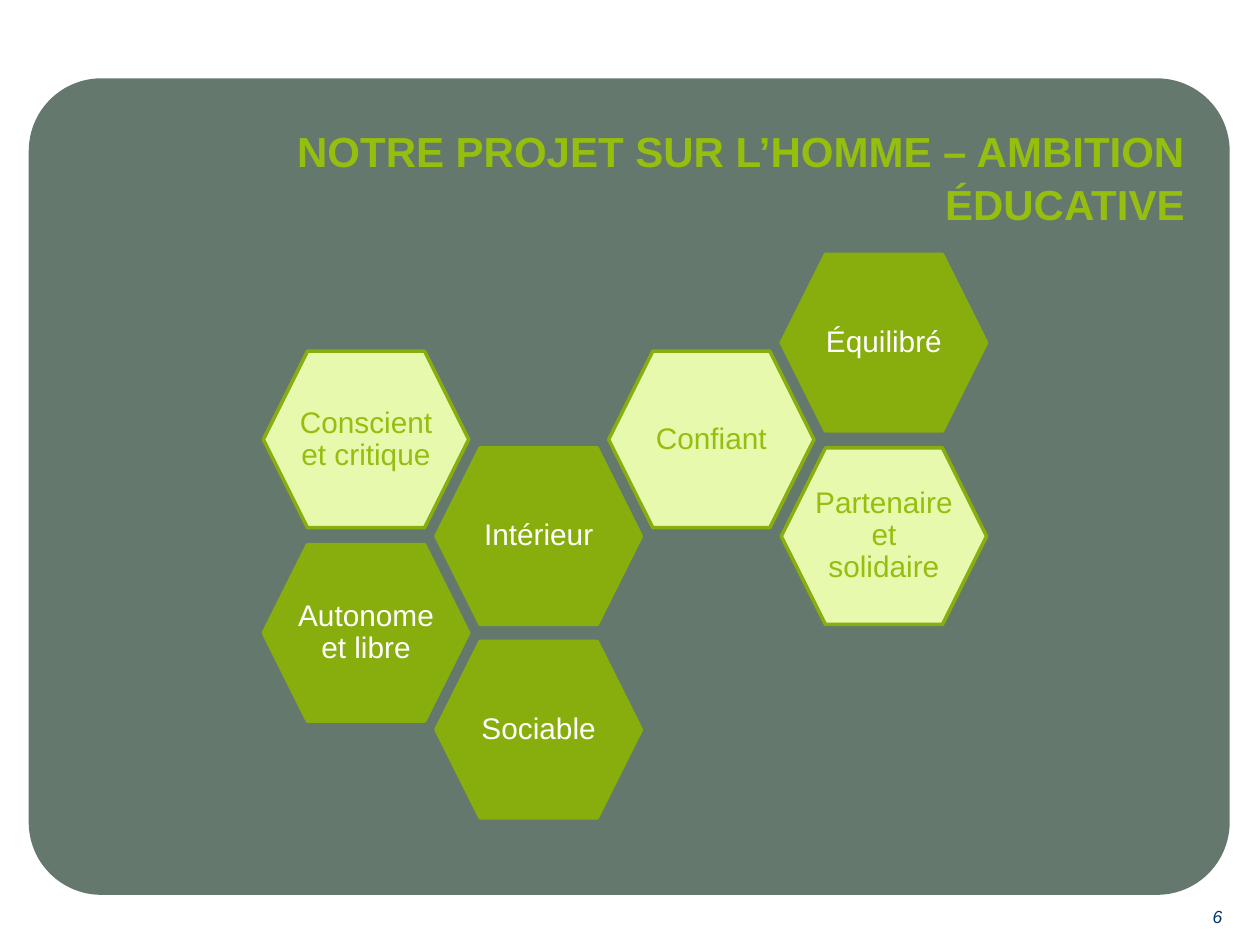
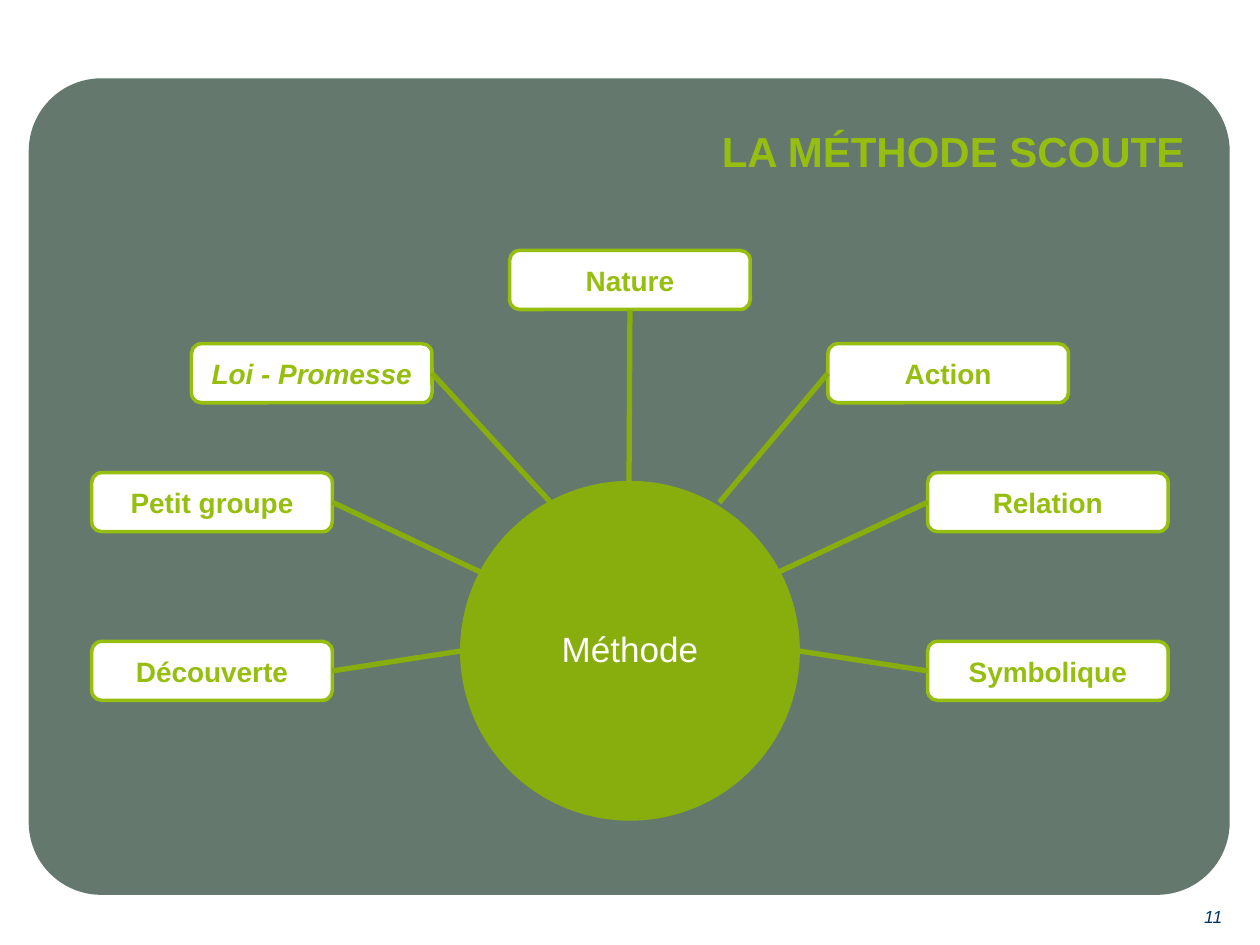
from dataclasses import dataclass

from lxml.etree import SubElement
from pptx import Presentation
from pptx.dml.color import RGBColor
from pptx.enum.shapes import MSO_CONNECTOR, MSO_SHAPE
from pptx.enum.text import MSO_ANCHOR, PP_ALIGN
from pptx.oxml.ns import qn
from pptx.util import Cm, Pt


@dataclass(frozen=True)
class Theme:
    font: str = "Arial"
    panel: str = "64786E"
    lime: str = "96BE0F"
    green: str = "88AE0E"
    pale: str = "E7F9AD"
    white: str = "FFFFFF"
    navy: str = "003366"
    title_size: int = 24
    hub_size: int = 20
    quality_size: int = 17
    element_size: int = 16
    number_size: int = 10
    outline: float = 2
    spoke: float = 3


SLIDE_W, SLIDE_H = 25.4, 19.05
PANEL = (0.58, 1.58, 24.21, 16.46)
TITLE = (1.27, 2.36, 22.86, 1.57)
NUMBER = (16.15, 18.14, 8.74, 0.53)

HEX_W, HEX_H = 4.14, 3.56
HEX_LEFT, HEX_TOP = 5.31, 5.13
HEX_STEP_X, HEX_STEP_Y = 3.48, 1.95
LABEL_PAD_X, LABEL_PAD_Y = 0.64, 0.55

HUB_SIZE, HUB_TOP = 6.78, 9.73
BOX_W, BOX_H = 4.85, 1.19
BOTTOM, LEFT, RIGHT = 2, 1, 3

QUALITIES = [
    ("Conscient et critique", 0, 1, True),
    ("Autonome et libre", 0, 3, False),
    ("Sociable", 1, 4, False),
    ("Intérieur", 1, 2, False),
    ("Confiant", 2, 1, True),
    ("Partenaire et solidaire", 3, 2, True),
    ("Équilibré", 3, 0, False),
]

OUTER_X, INNER_X = 1.85, 3.86
METHOD_ELEMENTS = [
    ("Découverte", OUTER_X, 12.93, RIGHT, (9.31, 13.12)),
    ("Petit groupe", OUTER_X, 9.53, RIGHT, (9.68, 11.53)),
    ("Loi - Promesse", INNER_X, 6.93, RIGHT, (11.1, 10.13)),
    ("Nature", (SLIDE_W - BOX_W) / 2, 5.05, BOTTOM, (12.68, HUB_TOP)),
    ("Action", SLIDE_W - INNER_X - BOX_W, 6.93, LEFT, (14.5, 10.13)),
    ("Relation", SLIDE_W - OUTER_X - BOX_W, 9.53, LEFT, (15.7, 11.53)),
    ("Symbolique", SLIDE_W - OUTER_X - BOX_W, 12.93, LEFT, (16.09, 13.12)),
]


class Deck:
    def __init__(self, theme):
        self.theme = theme
        self.presentation = Presentation()
        self.presentation.slide_width = Cm(SLIDE_W)
        self.presentation.slide_height = Cm(SLIDE_H)
        self.slide = None

    def start_slide(self, title, number):
        theme = self.theme
        self.slide = self.presentation.slides.add_slide(
            self.presentation.slide_layouts[6])
        self.shape(MSO_SHAPE.ROUNDED_RECTANGLE, PANEL, theme.panel, adjustment=0.089)
        self.text(NUMBER, number, theme.navy, theme.number_size,
                  align=PP_ALIGN.RIGHT, italic=True)
        self.text(TITLE, title, theme.lime, theme.title_size,
                  align=PP_ALIGN.RIGHT, spacing=1.05, bold=True)

    def shape(self, preset, frame, fill, line=None, adjustment=None, parent=None):
        shapes = (parent or self.slide).shapes
        shape = shapes.add_shape(preset, *map(Cm, frame))
        shape.shadow.inherit = False
        shape.fill.solid()
        shape.fill.fore_color.rgb = RGBColor.from_string(fill)
        if adjustment is not None:
            shape.adjustments[0] = adjustment
        if line:
            shape.line.color.rgb = RGBColor.from_string(line)
            shape.line.width = Pt(self.theme.outline)
        else:
            shape.line.fill.background()
        return shape

    def text(self, frame, words, color, size, parent=None, insets=None, **style):
        box = (parent or self.slide).shapes.add_textbox(*map(Cm, frame))
        for side, inset in (insets or {}).items():
            setattr(box.text_frame, side, Cm(inset))
        self.label(box, words, color, size, **style)

    def label(self, shape, words, color, size, align=PP_ALIGN.CENTER,
              anchor=MSO_ANCHOR.TOP, spacing=1.0, bold=False, italic=False):
        frame = shape.text_frame
        frame.word_wrap = True
        frame.vertical_anchor = anchor
        paragraph = frame.paragraphs[0]
        paragraph.alignment = align
        paragraph.line_spacing = spacing
        run = paragraph.add_run()
        run.text = words
        run.font.color.rgb = RGBColor.from_string(color)
        formats = {"name": self.theme.font, "size": Pt(size),
                   "bold": bold, "italic": italic}
        for attribute, value in formats.items():
            setattr(run.font, attribute, value)

    def hexagon(self, words, column, row, pale):
        theme = self.theme
        left = HEX_LEFT + column * HEX_STEP_X
        top = HEX_TOP + row * HEX_STEP_Y
        cell = self.slide.shapes.add_group_shape()
        self.shape(MSO_SHAPE.HEXAGON, (left, top, HEX_W, HEX_H),
                   theme.pale if pale else theme.green, theme.green, 0.25, cell)
        caption = (left + LABEL_PAD_X, top + LABEL_PAD_Y,
                   HEX_W - 2 * LABEL_PAD_X, HEX_H - 2 * LABEL_PAD_Y)
        insets = {"margin_left": 0, "margin_right": 0,
                  "margin_top": 0.05, "margin_bottom": 0.05}
        self.text(caption, words, theme.lime if pale else theme.white,
                  theme.quality_size, cell, insets,
                  anchor=MSO_ANCHOR.MIDDLE, spacing=0.9)

    def hub(self, words):
        theme = self.theme
        frame = ((SLIDE_W - HUB_SIZE) / 2, HUB_TOP, HUB_SIZE, HUB_SIZE)
        circle = self.shape(MSO_SHAPE.OVAL, frame, theme.green, theme.green)
        self.label(circle, words, theme.white, theme.hub_size,
                   anchor=MSO_ANCHOR.MIDDLE, spacing=0.9)

    def box(self, words, left, top, italic=False):
        theme = self.theme
        box = self.shape(MSO_SHAPE.ROUNDED_RECTANGLE, (left, top, BOX_W, BOX_H),
                         theme.white, theme.lime)
        self.label(box, words, theme.lime, theme.element_size,
                   anchor=MSO_ANCHOR.MIDDLE, bold=True, italic=italic)
        return box

    def spoke(self, box, side, hub_point):
        end = [Cm(value) for value in hub_point]
        spoke = self.slide.shapes.add_connector(MSO_CONNECTOR.STRAIGHT, *end, *end)
        spoke.begin_connect(box, side)
        spoke.line.color.rgb = RGBColor.from_string(self.theme.green)
        spoke.line.width = Pt(self.theme.spoke)
        SubElement(spoke._element.spPr, qn("a:effectLst"))


def main():
    deck = Deck(Theme())

    deck.start_slide("NOTRE PROJET SUR L’HOMME – AMBITION ÉDUCATIVE", "6")
    for quality in QUALITIES:
        deck.hexagon(*quality)

    deck.start_slide("LA MÉTHODE SCOUTE", "11")
    deck.hub("Méthode")
    for words, left, top, side, hub_point in METHOD_ELEMENTS:
        box = deck.box(words, left, top, italic=words == "Loi - Promesse")
        deck.spoke(box, side, hub_point)

    deck.presentation.save("out.pptx")


if __name__ == "__main__":
    main()
